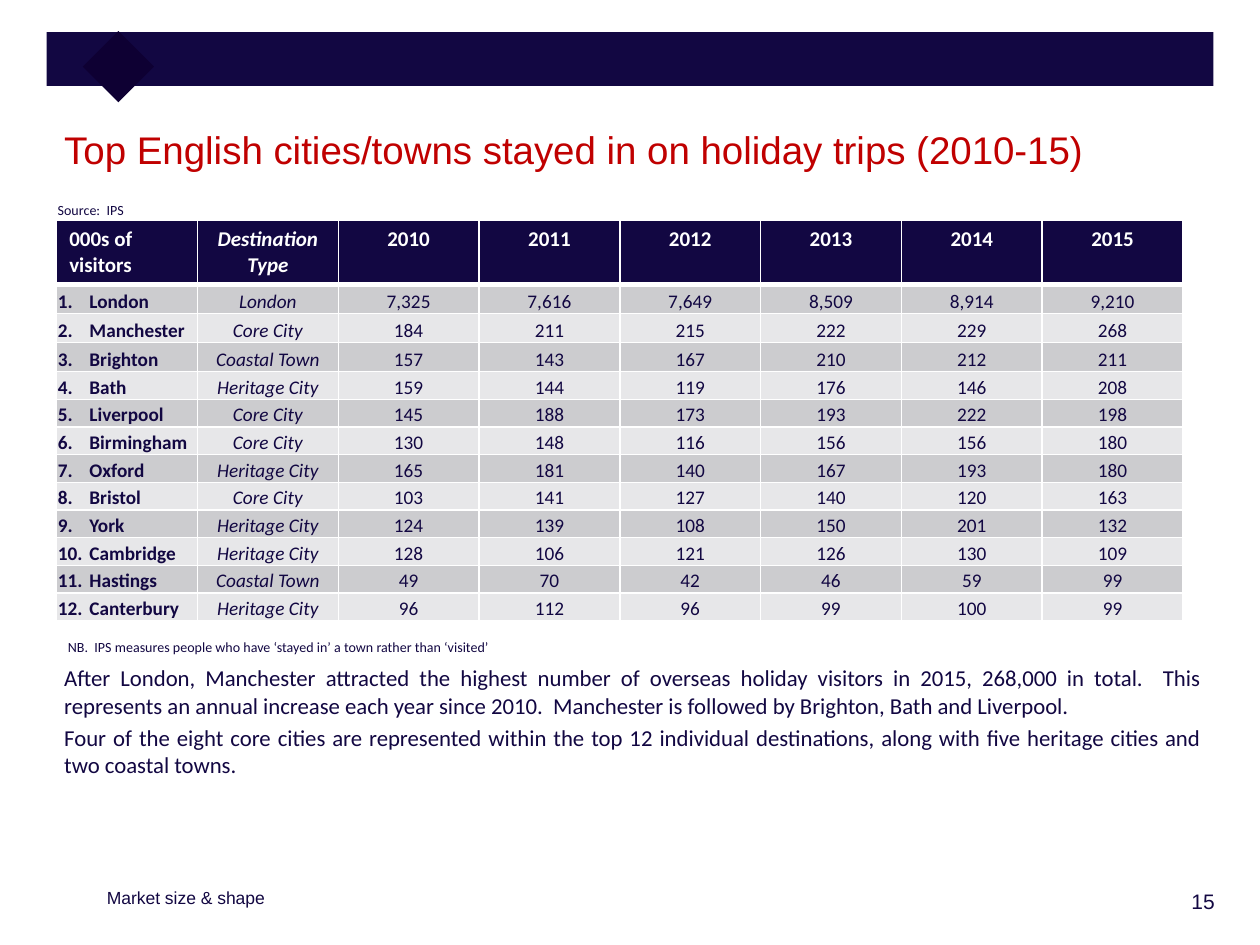
from lxml import etree
from pptx import Presentation
from pptx import util as u
from pptx.dml import color
from pptx.enum import shapes, text
from pptx.oxml import ns

WIDTH, HEIGHT = u.Inches(10), u.Inches(7.5)
NAVY, WHITE, RED = "120742", "FFFFFF", "C00000"
BANDS = ["CCCCCF", "E7E7E9"]
LEFT, CENTRE = text.PP_ALIGN.LEFT, text.PP_ALIGN.CENTER
RIGHT, JUSTIFY = text.PP_ALIGN.RIGHT, text.PP_ALIGN.JUSTIFY

HEADINGS = ["000s of visitors", "Destination Type", "2010", "2011", "2012", "2013", "2014", "2015"]
CITIES = [
    ["London", "London", "7,325", "7,616", "7,649", "8,509", "8,914", "9,210"],
    ["Manchester", "Core City", "184", "211", "215", "222", "229", "268"],
    ["Brighton", "Coastal Town", "157", "143", "167", "210", "212", "211"],
    ["Bath", "Heritage City", "159", "144", "119", "176", "146", "208"],
    ["Liverpool", "Core City", "145", "188", "173", "193", "222", "198"],
    ["Birmingham", "Core City", "130", "148", "116", "156", "156", "180"],
    ["Oxford", "Heritage City", "165", "181", "140", "167", "193", "180"],
    ["Bristol", "Core City", "103", "141", "127", "140", "120", "163"],
    ["York", "Heritage City", "124", "139", "108", "150", "201", "132"],
    ["Cambridge", "Heritage City", "128", "106", "121", "126", "130", "109"],
    ["Hastings", "Coastal Town", "49", "70", "42", "46", "59", "99"],
    ["Canterbury", "Heritage City", "96", "112", "96", "99", "100", "99"],
]
COMMENTARY = [
    "After London, Manchester attracted the highest number of overseas holiday visitors in 2015, "
    "268,000 in total.  This represents an annual increase each year since 2010.  "
    "Manchester is followed by Brighton, Bath and Liverpool.",
    "Four of the eight core cities are represented within the top 12 individual destinations, "
    "along with five heritage cities and two coastal towns.",
]


def rgb(value):
    return color.RGBColor.from_string(value)


def area(left, top, width, height):
    return (int(WIDTH * left / 100), int(HEIGHT * top / 100),
            int(WIDTH * width / 100), int(HEIGHT * height / 100))


def add_span(para, words, size, font="Calibri", ink=NAVY, bold=False, italic=False):
    span = para.add_run()
    span.text = words
    span.font.size = u.Pt(size)
    span.font.name = font
    span.font.color.rgb = rgb(ink)
    span.font.bold = bold
    span.font.italic = italic


def set_bullet(para, kind, indent=0, **settings):
    props = para._p.get_or_add_pPr()
    props.set("marL", str(u.Inches(indent)))
    props.set("indent", str(-u.Inches(indent)))
    etree.SubElement(props, ns.qn("a:" + kind), settings)


def write_paras(box, lines, size, font="Calibri", ink=NAVY, align=LEFT):
    frame = box.text_frame
    frame.word_wrap = True
    frame.auto_size = text.MSO_AUTO_SIZE.NONE
    frame.vertical_anchor = text.MSO_ANCHOR.TOP
    for index, line in enumerate(lines):
        para = frame.add_paragraph() if index else frame.paragraphs[0]
        set_bullet(para, "buNone")
        para.alignment = align
        para.space_before = u.Pt(size * 0.2 if index else 0)
        add_span(para, line, size, font, ink)


def fill_placeholder(holder, place, lines, size, **style):
    holder.left, holder.top, holder.width, holder.height = place
    write_paras(holder, lines, size, **style)


def add_label(page, place, words, size, **style):
    write_paras(page.shapes.add_textbox(*place), [words], size, **style)


def add_block(page, place, fill, rotation=0):
    block = page.shapes.add_shape(shapes.MSO_SHAPE.RECTANGLE, *place)
    block.shadow.inherit = False
    block.fill.solid()
    block.fill.fore_color.rgb = rgb(fill)
    block.line.fill.background()
    block.rotation = rotation


def set_borders(cell, bottom):
    props = cell._tc.get_or_add_tcPr()
    for side, points in (("L", 1), ("R", 1), ("T", 1), ("B", bottom)):
        line = etree.SubElement(props, ns.qn("a:ln" + side), w=str(u.Pt(points)))
        solid = etree.SubElement(line, ns.qn("a:solidFill"))
        etree.SubElement(solid, ns.qn("a:srgbClr"), val=WHITE)


def fill_cell(cell, words, row, column):
    header = row == 0
    set_borders(cell, 3 if header else 1)
    cell.fill.solid()
    cell.fill.fore_color.rgb = rgb(NAVY if header else BANDS[(row - 1) % 2])
    para = cell.text_frame.paragraphs[0]
    para.alignment = CENTRE if column else LEFT
    if not header:
        cell.vertical_anchor = text.MSO_ANCHOR.BOTTOM
        cell.margin_left = cell.margin_right = cell.margin_top = u.Inches(0.01)
        cell.margin_bottom = 0
        if column == 0:
            set_bullet(para, "buAutoNum", 0.25, type="arabicPeriod", startAt=str(row))
    add_span(para, words, 12 if header else 11, ink=WHITE if header else NAVY,
             bold=header or column == 0, italic=column == 1)


def add_city_table(page, place):
    rows = [HEADINGS] + CITIES
    table = page.shapes.add_table(len(rows), len(HEADINGS), *place).table
    for column in table.columns:
        column.width = place[2] // len(HEADINGS)
    heights = [0.51] + [0.23] * 3 + [0.22] * 9
    for row, (values, height) in enumerate(zip(rows, heights)):
        table.rows[row].height = u.Inches(height)
        for column, words in enumerate(values):
            fill_cell(table.cell(row, column), words, row, column)


def main():
    deck = Presentation()
    deck.slide_width, deck.slide_height = WIDTH, HEIGHT
    page = deck.slides.add_slide(deck.slide_layouts[1])
    add_block(page, area(3.7, 3.4, 92.6, 5.7), NAVY)
    add_block(page, area(7.4, 4.4, 4, 5.33), "0E0033", rotation=45)
    fill_placeholder(page.shapes.title, area(4.1, 12.67, 100 - 4.1, 8.13),
                     ["Top English cities/towns stayed in on holiday trips (2010-15)"],
                     22, font="Arial", ink=RED)
    add_label(page, area(3.6, 20.67, 8, 2.4), "Source:  IPS", 8)
    add_city_table(page, area(4.5, 23.33, 89.4, 42.4))
    add_label(page, area(4.4, 66.93, 37.8, 2.4),
              "NB.  IPS measures people who have ‘stayed in’ a town rather than ‘visited’", 8)
    fill_placeholder(page.placeholders[1], area(4.1, 69.6, 92.1, 24.5),
                     COMMENTARY, 13, align=JUSTIFY)
    add_label(page, area(7.5, 93.2, 26.7, 4), "Market size & shape", 10, font="Arial")
    add_label(page, area(85.3, 93.33, 12.1, 4.8), "15", 12, font="Arial", align=RIGHT)
    deck.save("out.pptx")


if __name__ == "__main__":
    main()
